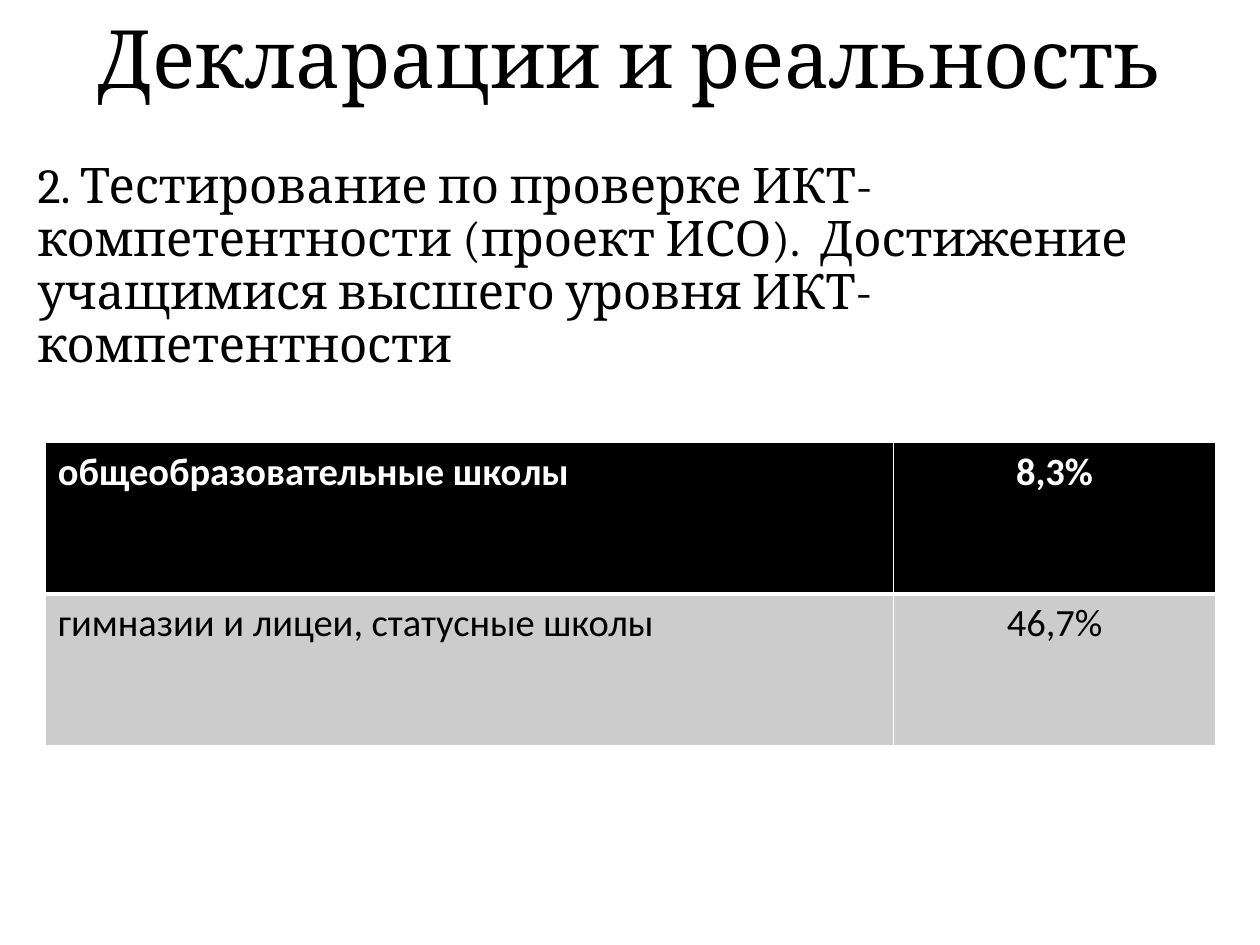
from dataclasses import dataclass

from lxml.etree import SubElement
from pptx import Presentation
from pptx.dml.color import RGBColor
from pptx.enum.text import MSO_ANCHOR, PP_ALIGN
from pptx.oxml.ns import qn
from pptx.util import Inches, Pt


@dataclass(frozen=True)
class Theme:
    black: str = "000000"
    white: str = "FFFFFF"
    gray: str = "CCCCCC"
    serif: str = "Cambria"
    sans: str = "Calibri"
    title_size: int = 46
    body_size: int = 28
    table_size: int = 22
    thin_line: int = 1
    thick_line: int = 3


THEME = Theme()


def write_text(frame, text, *, font, size, color=THEME.black, bold=False,
               align=PP_ALIGN.LEFT, line_spacing=None, space_before=0):
    para = frame.paragraphs[0]
    para.alignment = align
    para.line_spacing = line_spacing
    para.space_before = Pt(space_before)
    span = para.add_run()
    span.text = text
    span.font.name = font
    span.font.size = Pt(size)
    span.font.bold = bold
    span.font.color.rgb = RGBColor.from_string(color)


def add_text_box(page, text, left, top, width, height,
                 anchor=MSO_ANCHOR.TOP, **text_format):
    box = page.shapes.add_textbox(
        Inches(left), Inches(top), Inches(width), Inches(height))
    box.text_frame.word_wrap = True
    box.text_frame.vertical_anchor = anchor
    write_text(box.text_frame, text, **text_format)


def set_borders(cell, **widths):
    properties = cell._tc.get_or_add_tcPr()
    for position, (side, width) in enumerate(widths.items()):
        line = SubElement(properties, qn(f"a:{side}"), w=str(Pt(width)))
        fill = SubElement(line, qn("a:solidFill"))
        SubElement(fill, qn("a:srgbClr"), val=THEME.white)
        properties.remove(line)
        properties.insert(position, line)


def add_results_table(page, results):
    table = page.shapes.add_table(
        len(results), 2, Inches(0.36), Inches(3.51),
        Inches(9.29), Inches(2.41)).table
    for column, width in zip(table.columns, (6.73, 2.56)):
        column.width = Inches(width)
    for row_index, values in enumerate(results):
        header = row_index == 0
        for column_index, value in enumerate(values):
            cell = table.cell(row_index, column_index)
            cell.fill.solid()
            cell.fill.fore_color.rgb = RGBColor.from_string(
                THEME.black if header else THEME.gray)
            write_text(
                cell.text_frame, value, font=THEME.sans,
                size=THEME.table_size, bold=header,
                color=THEME.white if header else THEME.black,
                align=PP_ALIGN.CENTER if column_index else PP_ALIGN.LEFT)
            set_borders(
                cell, lnL=THEME.thin_line, lnR=THEME.thin_line,
                lnT=THEME.thin_line if header else THEME.thick_line,
                lnB=THEME.thick_line if header else THEME.thin_line)


def main():
    deck = Presentation()
    deck.slide_width, deck.slide_height = Inches(10), Inches(7.5)
    page = deck.slides.add_slide(deck.slide_layouts[6])
    add_text_box(
        page,
        "2. Тестирование по проверке ИКТ-компетентности (проект ИСО).  "
        "Достижение учащимися высшего уровня ИКТ-компетентности",
        0.2, 1.23, 9.37, 1.89, font=THEME.serif, size=THEME.body_size,
        line_spacing=0.9, space_before=5.6)
    add_results_table(page, (
        ("общеобразовательные школы", "8,3%"),
        ("гимназии и лицеи, статусные школы", "46,7%"),
    ))
    add_text_box(
        page, "Декларации и реальность", 0, 0.28, 10, 0.34,
        anchor=MSO_ANCHOR.MIDDLE, font=THEME.serif, size=THEME.title_size,
        align=PP_ALIGN.CENTER)
    deck.save("out.pptx")


if __name__ == "__main__":
    main()
